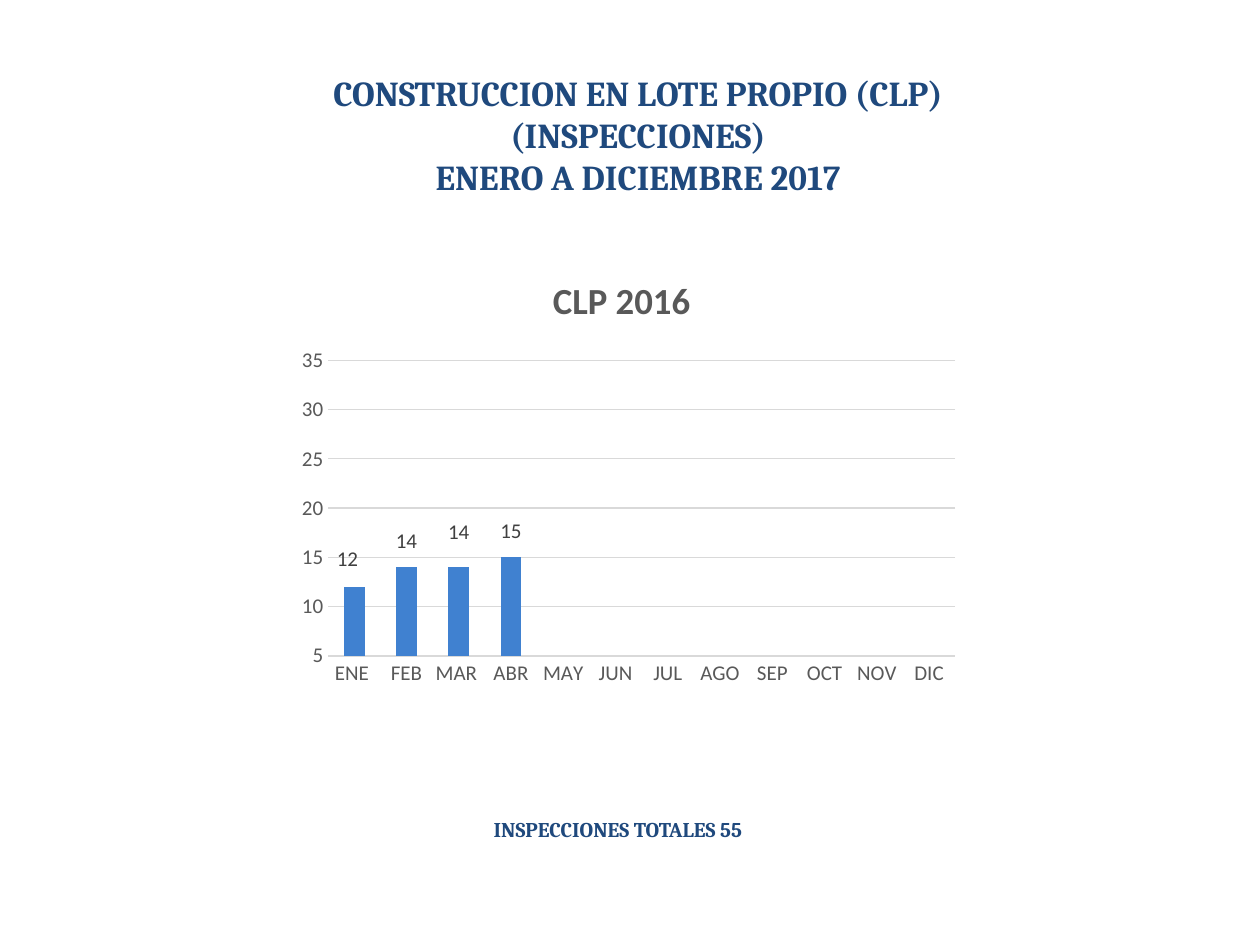
from dataclasses import dataclass
from typing import Any

from pptx import Presentation
from pptx.chart.data import CategoryChartData
from pptx.dml.color import RGBColor
from pptx.enum.chart import XL_CHART_TYPE, XL_TICK_MARK
from pptx.enum.text import MSO_ANCHOR, MSO_AUTO_SIZE, PP_ALIGN
from pptx.oxml import parse_xml
from pptx.oxml.ns import nsdecls
from pptx.util import Inches, Pt


@dataclass(frozen=True)
class Theme:
    navy: str = "1F497D"
    blue: str = "4081D0"
    gray: str = "595959"
    dark: str = "404040"
    rule: str = "D9D9D9"
    serif: str = "Cambria"
    sans: str = "Calibri"
    head: float = 20
    cap: float = 21
    small: float = 12


@dataclass(frozen=True)
class Box:
    left: float
    top: float
    width: float
    height: float

    def spread(self) -> list[int]:
        return [Inches(v) for v in (self.left, self.top, self.width, self.height)]


@dataclass(frozen=True)
class Month:
    name: str
    count: int | None = None
    shift: tuple[float, float] = (0, 0)


THEME = Theme()
HEAD = "CONSTRUCCION EN LOTE PROPIO (CLP)\n(INSPECCIONES)\nENERO A DICIEMBRE 2017"
MONTHS = [
    Month("ENE ", 12, (-0.01, -0.14)),
    Month("FEB", 14, (0, -0.16)),
    Month("MAR ", 14, (0, -0.18)),
    Month("ABR", 15, (0, -0.17)),
    *map(Month, ["MAY", "JUN", "JUL", "AGO", "SEP", "OCT", "NOV", "DIC"]),
]
PLAIN = (
    f'<c:extLst {nsdecls("c")}><c:ext uri="{{CE6537A1-D6FC-4f65-9D91-7224C49458BB}}" '
    'xmlns:c15="http://schemas.microsoft.com/office/drawing/2012/chart">'
    '<c15:showLeaderLines val="0"/></c:ext></c:extLst>'
)


def apply(item: Any, **values: Any) -> None:
    for key, value in values.items():
        setattr(item, key, value)


def style(font: Any, name: str, size: float, tint: str, bold: bool = False) -> None:
    apply(font, name=name, size=Pt(size), bold=bold)
    font.color.rgb = RGBColor.from_string(tint)


def stroke(line: Any, width: float) -> None:
    line.color.rgb = RGBColor.from_string(THEME.rule)
    line.width = Pt(width)


def write(shape: Any, box: Box, text: str, size: float, align: PP_ALIGN, anchor: MSO_ANCHOR) -> None:
    apply(shape, **dict(zip(("left", "top", "width", "height"), box.spread())))
    frame = shape.text_frame
    apply(frame, text=text, word_wrap=True, auto_size=MSO_AUTO_SIZE.NONE, vertical_anchor=anchor)
    for para in frame.paragraphs:
        para.alignment = align
        for run in para.runs:
            style(run.font, THEME.serif, size, THEME.navy, True)


def layout(mode: str = "", **spots: float) -> Any:
    parts = '<c:layoutTarget val="inner"/>' if mode == "inner" else ""
    if mode:
        parts += '<c:xMode val="edge"/><c:yMode val="edge"/>'
    parts += "".join(f'<c:{key} val="{value}"/>' for key, value in spots.items())
    return parse_xml(f'<c:layout {nsdecls("c")}><c:manualLayout>{parts}</c:manualLayout></c:layout>')


def place(node: Any, after: str, item: Any) -> None:
    for old in node.xpath("c:layout"):
        node.remove(old)
    if after:
        node.xpath(after)[0].addnext(item)
    else:
        node.insert(0, item)


def label(series: Any) -> None:
    for index, month in enumerate(MONTHS):
        if month.count is None:
            continue
        font = series.points[index].data_label.font
        style(font, THEME.sans, THEME.small, THEME.dark)
        node = series._element.xpath(f"c:dLbls/c:dLbl[c:idx/@val={index}]")[0]
        place(node, "c:idx", layout(x=month.shift[0], y=month.shift[1]))
    group = series._element.xpath("c:dLbls")[0]
    for lead in group.xpath("c:showLeaderLines"):
        lead.set("val", "0")
    group.append(parse_xml(PLAIN))


def plot(slide: Any, box: Box) -> None:
    data = CategoryChartData()
    data.categories = [month.name for month in MONTHS]
    data.add_series("Series 1", [month.count for month in MONTHS])
    chart = slide.shapes.add_chart(XL_CHART_TYPE.COLUMN_STACKED, *box.spread(), data).chart
    style(chart.font, THEME.sans, 10, "000000")
    apply(chart, has_legend=False, has_title=True)
    title = chart.chart_title
    title.text_frame.text = "CLP 2016"
    style(title.text_frame.paragraphs[0].runs[0].font, THEME.sans, THEME.cap, THEME.gray, True)
    place(title._element, "c:tx", layout("edge", x=0.38, y=0.03))
    title.include_in_layout = False

    bars = chart.plots[0]
    apply(bars, gap_width=150, overlap=100, vary_by_categories=False)
    series = bars.series[0]
    series.format.fill.solid()
    series.format.fill.fore_color.rgb = RGBColor.from_string(THEME.blue)
    label(series)

    for axis in (chart.category_axis, chart.value_axis):
        apply(axis, major_tick_mark=XL_TICK_MARK.NONE, minor_tick_mark=XL_TICK_MARK.NONE)
        style(axis.tick_labels.font, THEME.sans, THEME.small, THEME.gray)
    stroke(chart.category_axis.format.line, 1)
    scale = chart.value_axis
    apply(scale, minimum_scale=5, maximum_scale=35, major_unit=5, has_major_gridlines=True)
    scale.format.line.fill.background()
    stroke(scale.major_gridlines.format.line, 0.75)
    area = chart._chartSpace.xpath("c:chart/c:plotArea")[0]
    place(area, "", layout("inner", x=0.06, y=0.24, w=0.92, h=0.67))


def main() -> None:
    deck = Presentation()
    apply(deck, slide_width=Inches(10), slide_height=Inches(7.5))
    slide = deck.slides.add_slide(deck.slide_layouts[5])
    write(slide.shapes.title, Box(2.45, 0.52, 5.23, 1.11), HEAD, THEME.head,
          PP_ALIGN.CENTER, MSO_ANCHOR.TOP)
    plot(slide, Box(2.28, 2.02, 5.41, 3.5))
    foot = Box(3.82, 6.43, 3.23, 0.3)
    write(slide.shapes.add_textbox(*foot.spread()), foot, "INSPECCIONES TOTALES 55",
          THEME.small, PP_ALIGN.LEFT, MSO_ANCHOR.BOTTOM)
    deck.save("out.pptx")


if __name__ == "__main__":
    main()
